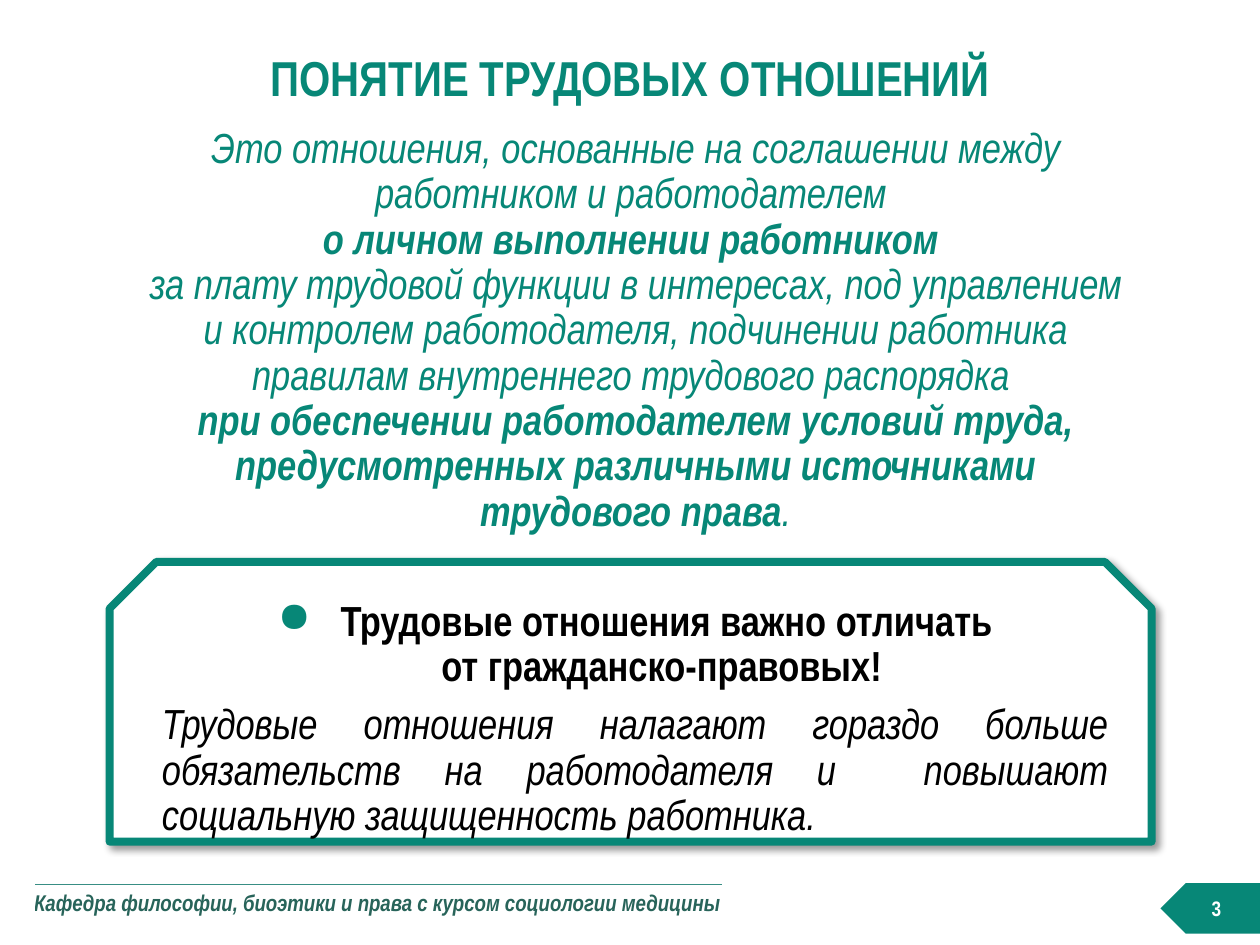
"""Build a slide defining employment relations."""
from lxml import etree
from pptx import Presentation
from pptx import util as u
from pptx.dml.color import RGBColor
from pptx.enum import shapes, text
from pptx.oxml import parse_xml
from pptx.oxml.ns import qn

NS = 'xmlns:a="http://schemas.openxmlformats.org/drawingml/2006/main"'
FONT = "Arial Narrow"
COLORS = {"teal": "078777", "dark": "28645A", "rule": "388E84",
          "white": "FFFFFF", "black": "000000"}

TITLE = "ПОНЯТИЕ ТРУДОВЫХ ОТНОШЕНИЙ"
DEFINITION = [
    ("Это отношения, основанные на соглашении между работником и работодателем \n", False),
    ("о личном выполнении работником \n", True),
    ("за плату трудовой функции в интересах, под управлением и контролем работодателя, "
     "подчинении работника правилам внутреннего трудового распорядка \n", False),
    ("при обеспечении работодателем условий труда, предусмотренных различными "
     "источниками трудового права", True),
    (".", False),
]
WARNING = "Трудовые отношения важно отличать\nот гражданско-правовых! "
REASON = ("Трудовые отношения налагают гораздо больше обязательств на работодателя и  "
          "повышают социальную защищенность работника.")
DEPARTMENT = "Кафедра философии, биоэтики и права с курсом социологии медицины"
PAGE = "3"


def rgb(name):
    return RGBColor.from_string(COLORS[name])


def box(*sides):
    return [u.Inches(side) for side in sides]


def add_text(paragraph, words, size, color, bold=False, italic=False):
    for number, line in enumerate(words.split("\n")):
        if number:
            paragraph.add_line_break()
        if line:
            run = paragraph.add_run()
            run.text = line
            font = run.font
            font.name, font.size = FONT, u.Pt(size)
            font.bold, font.italic = bold, italic
            font.color.rgb = rgb(color)


def set_frame(frame, insets, anchor):
    frame.word_wrap = True
    frame.vertical_anchor = anchor
    (frame.margin_left, frame.margin_top,
     frame.margin_right, frame.margin_bottom) = box(*insets)
    return frame


def align(paragraph, alignment, spacing=0.9):
    paragraph.alignment = alignment
    paragraph.line_spacing = spacing
    return paragraph


def indent(paragraph, left, first):
    props = paragraph._p.get_or_add_pPr()
    props.set("marL", str(u.Inches(left)))
    props.set("indent", str(u.Inches(first)))
    return props


def add_panel(slide, kind, place, fill, line=None):
    panel = slide.shapes.add_shape(kind, *box(*place))
    panel.shadow.inherit = False
    panel.fill.solid()
    panel.fill.fore_color.rgb = rgb(fill)
    if line:
        panel.line.color.rgb = rgb(line)
        panel.line.width = u.Pt(4.5)
    else:
        panel.line.fill.background()
    return panel


def add_footer(slide):
    graphic = slide.shapes.add_table(1, 1, *box(0.27, 7.02, 5.47, 0.43))
    table = graphic.table
    table.first_row = table.horz_banding = False
    cell = table.cell(0, 0)
    cell.fill.background()
    (cell.margin_left, cell.margin_top,
     cell.margin_right, cell.margin_bottom) = box(0, 0.08, 0, 0)
    cell._tc.get_or_add_tcPr().insert(0, parse_xml(
        f'<a:lnT {NS} w="{u.Pt(1)}"><a:solidFill><a:srgbClr val="{COLORS["rule"]}"/>'
        '</a:solidFill></a:lnT>'))
    add_text(cell.text_frame.paragraphs[0], DEPARTMENT, 13, "dark", True, True)


def add_title(slide):
    title = slide.shapes.add_textbox(*box(1.94, 0.31, 6.12, 0.66))
    frame = set_frame(title.text_frame, (0, 0, 0, 0), text.MSO_ANCHOR.MIDDLE)
    heading = align(frame.paragraphs[0], text.PP_ALIGN.CENTER)
    add_text(heading, TITLE, 28, "teal", bold=True)


def add_callout(slide):
    callout = add_panel(slide, shapes.MSO_SHAPE.SNIP_2_SAME_RECTANGLE,
                        (0.87, 4.46, 8.27, 2.22), "white", "teal")
    effects = callout._element.spPr.find(qn("a:effectLst"))
    effects.append(parse_xml(
        f'<a:outerShdw {NS} blurRad="{u.Pt(4)}" dist="{u.Pt(3)}" dir="2700000" '
        f'algn="tl" rotWithShape="0"><a:srgbClr val="{COLORS["black"]}">'
        '<a:alpha val="40000"/></a:srgbClr></a:outerShdw>'))
    frame = set_frame(callout.text_frame, (0.04, 0.14, 0.16, 0.04), text.MSO_ANCHOR.MIDDLE)

    warning = align(frame.paragraphs[0], text.PP_ALIGN.CENTER)
    props = indent(warning, 0.69, -0.5)
    props.append(parse_xml(
        f'<a:buClr {NS}><a:srgbClr val="{COLORS["teal"]}"/></a:buClr>'))
    etree.SubElement(props, qn("a:buChar")).set("char", "●")
    add_text(warning, WARNING, 24, "black", bold=True)

    reason = align(frame.add_paragraph(), text.PP_ALIGN.JUSTIFY)
    reason.space_before = u.Pt(7.5)
    indent(reason, 0.19, 0)
    add_text(reason, REASON, 24, "black", italic=True)


def add_page_tag(slide):
    tag = add_panel(slide, shapes.MSO_SHAPE.PENTAGON, (9.21, 7.01, 0.79, 0.4), "teal")
    tag._element.spPr.get_or_add_xfrm().set("flipH", "1")
    frame = set_frame(tag.text_frame, (0.1, 0.05, 0.1, 0.05), text.MSO_ANCHOR.MIDDLE)
    number = align(frame.paragraphs[0], text.PP_ALIGN.CENTER, 1.0)
    add_text(number, PAGE, 12, "white", bold=True)


def add_definition(slide):
    definition = add_panel(slide, shapes.MSO_SHAPE.RECTANGLE,
                           (0.91, 0.97, 8.27, 3.35), "white")
    color = definition._element.spPr.find(qn("a:solidFill"))[0]
    etree.SubElement(color, qn("a:alpha")).set("val", "27000")
    frame = set_frame(definition.text_frame, (0.2, 0.04, 0.2, 0.04), text.MSO_ANCHOR.TOP)
    paragraph = align(frame.paragraphs[0], text.PP_ALIGN.CENTER)
    for words, bold in DEFINITION:
        add_text(paragraph, words, 24, "teal", bold, True)


def main():
    deck = Presentation()
    deck.slide_width, deck.slide_height = box(10, 7.5)
    slide = deck.slides.add_slide(deck.slide_layouts[6])
    for add_part in (add_footer, add_title, add_callout, add_page_tag, add_definition):
        add_part(slide)
    deck.save("out.pptx")


if __name__ == "__main__":
    main()
